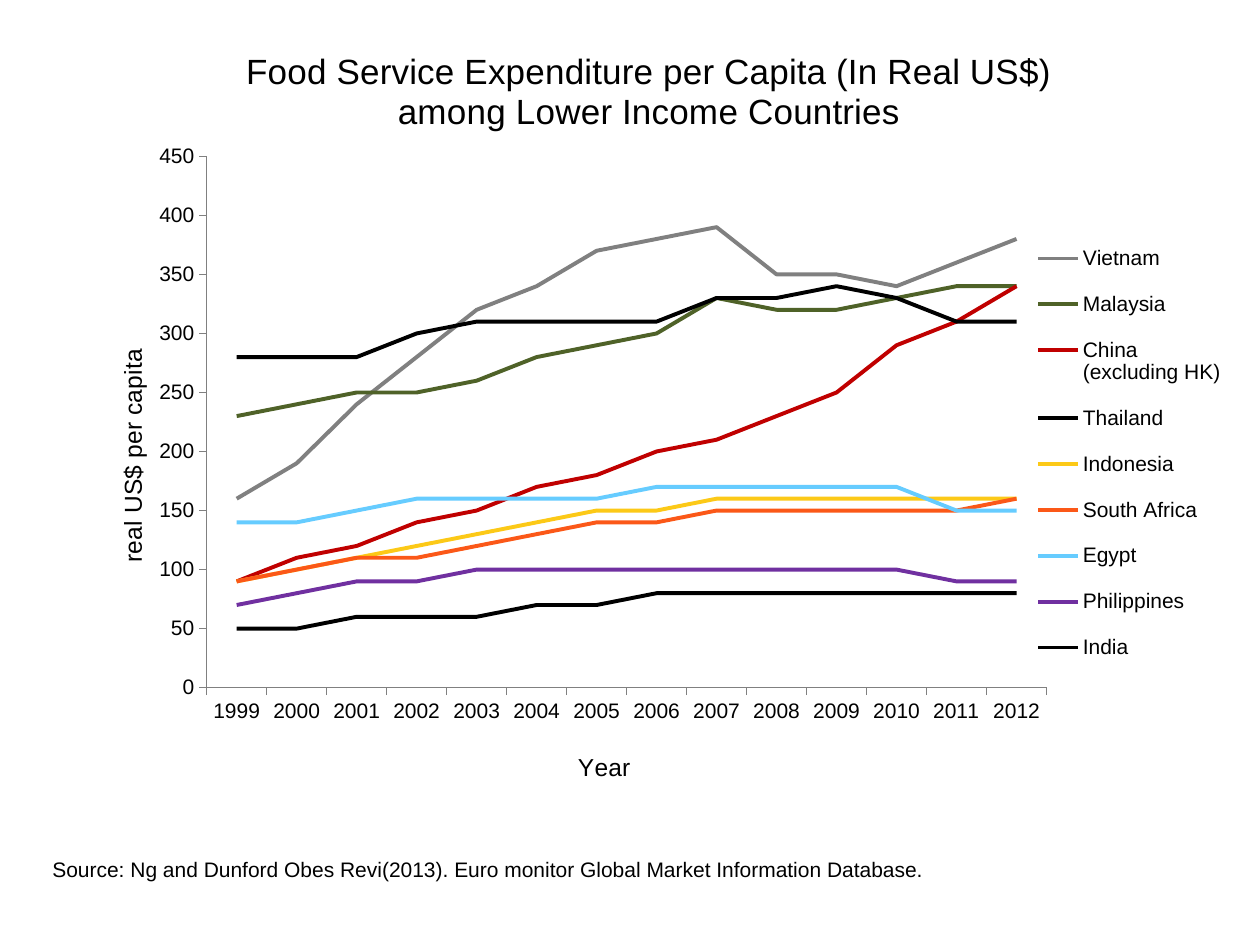
from lxml import etree
from pptx import Presentation
from pptx import util as u
from pptx.chart.data import CategoryChartData
from pptx.dml.color import RGBColor
from pptx.enum import chart as ch, text
from pptx.oxml.ns import qn

PX = 914400 / 126
BLACK = RGBColor(0, 0, 0)
GRAY = RGBColor(0x80, 0x80, 0x80)
OLIVE = RGBColor(0x4F, 0x62, 0x28)
RED = RGBColor(0xC0, 0, 0)
GOLD = RGBColor(0xFC, 0xC9, 0x17)
ORANGE = RGBColor(0xFB, 0x58, 0x18)
SKY = RGBColor(0x66, 0xCC, 0xFF)
PURPLE = RGBColor(0x70, 0x30, 0xA0)

YEARS = [str(year) for year in range(1999, 2013)]
LANDS = [
    ("Vietnam", GRAY, (160, 190, 240, 280, 320, 340, 370, 380, 390, 350, 350, 340, 360, 380)),
    ("Malaysia", OLIVE, (230, 240, 250, 250, 260, 280, 290, 300, 330, 320, 320, 330, 340, 340)),
    ("China (excluding HK)", RED,
     (90, 110, 120, 140, 150, 170, 180, 200, 210, 230, 250, 290, 310, 340)),
    ("Thailand", BLACK, (280, 280, 280, 300, 310, 310, 310, 310, 330, 330, 340, 330, 310, 310)),
    ("Indonesia", GOLD, (90, 100, 110, 120, 130, 140, 150, 150, 160, 160, 160, 160, 160, 160)),
    ("South Africa", ORANGE,
     (90, 100, 110, 110, 120, 130, 140, 140, 150, 150, 150, 150, 150, 160)),
    ("Egypt", SKY, (140, 140, 150, 160, 160, 160, 160, 170, 170, 170, 170, 170, 150, 150)),
    ("Philippines", PURPLE, (70, 80, 90, 90, 100, 100, 100, 100, 100, 100, 100, 100, 90, 90)),
    ("India", BLACK, (50, 50, 60, 60, 60, 70, 70, 80, 80, 80, 80, 80, 80, 80)),
]


def emu(*sizes):
    return [u.Emu(round(size * PX)) for size in sizes]


def assign(item, values):
    for name, value in values.items():
        setattr(item, name, value)


def place(node, **spots):
    """Fix a chart part at fractions of the chart's size."""
    for old in node.findall(qn("c:layout")):
        node.remove(old)
    layout = etree.Element(qn("c:layout"))
    manual = etree.SubElement(layout, qn("c:manualLayout"))
    for tag, value in spots.items():
        etree.SubElement(manual, qn("c:" + tag)).set("val", str(value))
    overlay = node.find(qn("c:overlay"))
    if overlay is None:
        node.insert(0, layout)
    else:
        overlay.addprevious(layout)


class Deck:
    edge = {"xMode": "edge", "yMode": "edge"}

    def __init__(self, wide, high):
        self.show = Presentation()
        self.show.slide_width, self.show.slide_height = emu(wide, high)
        self.slide = self.show.slides.add_slide(self.show.slide_layouts[6])

    def style(self, font, size):
        assign(font, {"name": "Arial", "size": u.Pt(size), "bold": False})
        font.color.rgb = BLACK

    def note(self, words, box, size):
        frame = self.slide.shapes.add_textbox(*emu(*box)).text_frame
        assign(frame, {"word_wrap": True, "auto_size": text.MSO_AUTO_SIZE.SHAPE_TO_FIT_TEXT})
        frame.text = words
        self.style(frame.paragraphs[0].runs[0].font, size)

    def title(self, item, words, size, x, y):
        item.text_frame.text = words
        for para in item.text_frame.paragraphs:
            self.style(para.font, size)
            for run in para.runs:
                self.style(run.font, size)
        place(item._element, **self.edge, x=x, y=y)

    def axis(self, axis, words, x, y):
        assign(axis, {"has_major_gridlines": False, "has_title": True,
                      "major_tick_mark": ch.XL_TICK_MARK.OUTSIDE,
                      "minor_tick_mark": ch.XL_TICK_MARK.NONE})
        self.style(axis.tick_labels.font, 12)
        axis.format.line.color.rgb = GRAY
        axis.format.line.width = u.Pt(0.75)
        self.title(axis.axis_title, words, 14, x, y)

    def lines(self, box):
        data = CategoryChartData(number_format="0")
        data.categories = YEARS
        for name, _, values in LANDS:
            data.add_series(name, values)
        chart = self.slide.shapes.add_chart(ch.XL_CHART_TYPE.LINE, *emu(*box), data).chart
        self.style(chart.font, 10)
        assign(chart, {"has_title": True, "has_legend": True})
        self.title(chart.chart_title, "Food Service Expenditure per Capita (In Real US$)\n"
                   "among Lower Income Countries", 20, 0.16, 0.01)
        self.axis(chart.category_axis, "Year", 0.44, 0.88)
        self.axis(chart.value_axis, "real US$ per capita", 0.05, 0.38)
        assign(chart.value_axis, {"minimum_scale": 0, "maximum_scale": 450, "major_unit": 50})
        assign(chart.value_axis.tick_labels,
               {"number_format": "0", "number_format_is_linked": False})
        assign(chart.legend, {"position": ch.XL_LEGEND_POSITION.RIGHT,
                              "include_in_layout": False})
        self.style(chart.legend.font, 12)
        place(chart.legend._element, **self.edge, x=0.83, y=0.23, w=0.16, h=0.57)
        plot = chart.plots[0]
        plot.vary_by_categories = False
        for line, (_, color, _) in zip(plot.series, LANDS):
            line.smooth = False
            line.format.line.color.rgb = color
            line.format.line.width = u.Pt(2.25)
        area = chart._chartSpace.find(".//" + qn("c:plotArea"))
        place(area, layoutTarget="inner", **self.edge, x=0.13, y=0.146, w=0.71, h=0.661)


def main():
    deck = Deck(1260, 945)
    deck.lines((53, 39, 1183, 804))
    deck.note("Source: Ng and Dunford Obes Revi(2013). "
              "Euro monitor Global Market Information Database.", (40, 850, 1008, 38), 12)
    deck.show.save("out.pptx")


if __name__ == "__main__":
    main()
